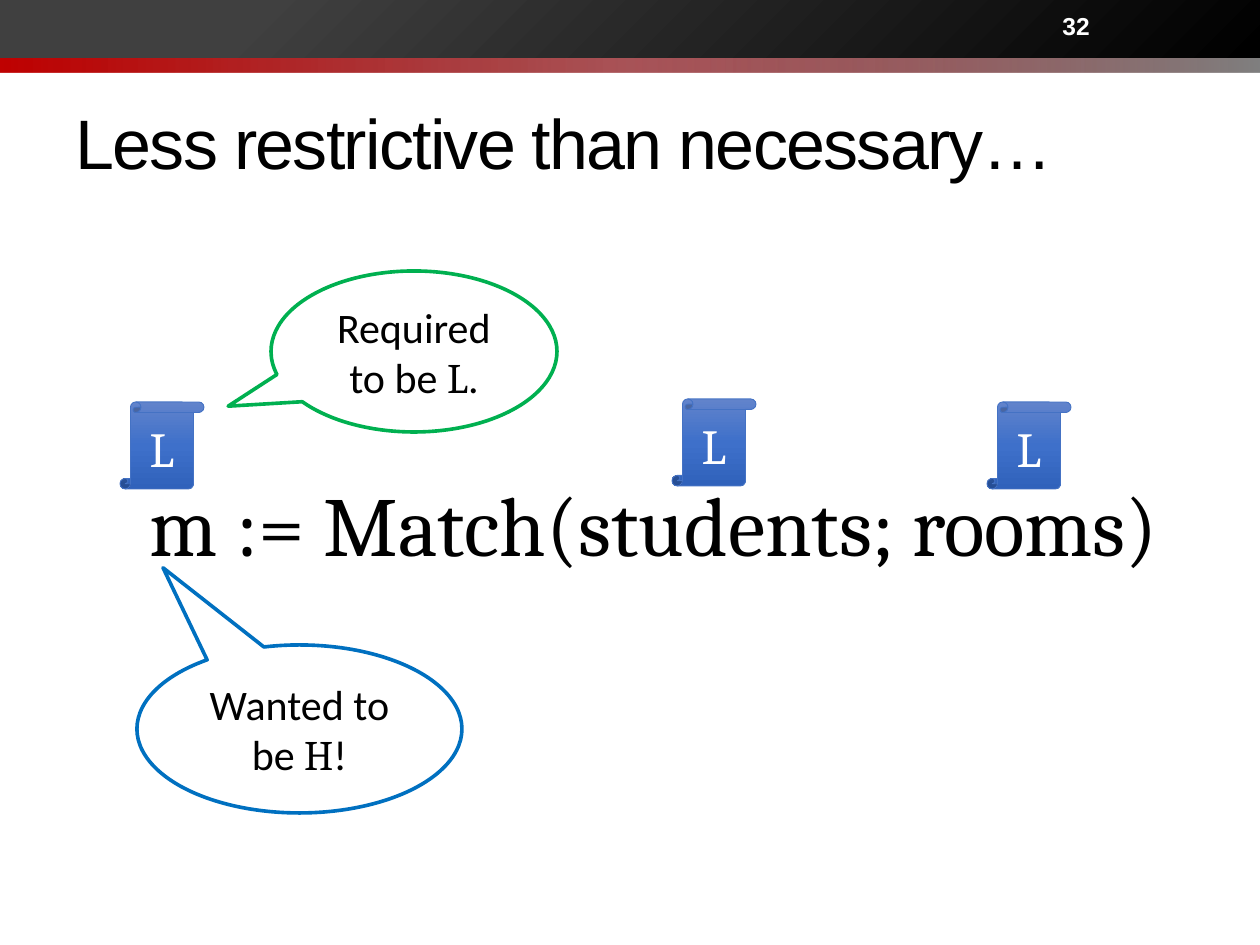
from dataclasses import dataclass

from lxml.etree import SubElement
from pptx import Presentation
from pptx.dml.color import RGBColor
from pptx.enum.shapes import MSO_SHAPE as Shape
from pptx.enum.text import MSO_ANCHOR as Anchor, PP_ALIGN as Align
from pptx.oxml.ns import qn
from pptx.util import Emu, Pt

EMU_PER_PX = 914400 / 126
COLORS = {
    "black": "000000", "white": "FFFFFF", "charcoal": "404040",
    "red": "C00000", "maroon": "7F0007", "grey": "808080",
    "green": "00B050", "blue": "0070C0", "scroll_line": "4472C4",
    "scroll_top": "6183CB", "scroll_middle": "3E70CA", "scroll_bottom": "3062BB",
}


@dataclass(frozen=True)
class Box:
    left: int
    top: int
    width: int
    height: int

    def emu(self) -> list[Emu]:
        return [px(n) for n in (self.left, self.top, self.width, self.height)]


@dataclass(frozen=True)
class Stop:
    position: int
    color: str
    opacity: int = 100


@dataclass(frozen=True)
class Callout:
    box: Box
    tail: tuple[float, float]
    color: str
    words: str
    label: str
    ending: str


def px(length: int) -> Emu:
    return Emu(round(length * EMU_PER_PX))


def rgb(name: str) -> RGBColor:
    return RGBColor.from_string(COLORS[name])


def write(paragraph, text: str, *, size: int, font: str, color: str = "black",
          align=Align.LEFT, bold: bool = False, spacing: int = 0) -> None:
    """Append a formatted run; spacing is in points."""
    paragraph.alignment = align
    run = paragraph.add_run()
    run.text = text
    run.font.size, run.font.name, run.font.bold = Pt(size), font, bold
    run.font.color.rgb = rgb(color)
    if spacing:
        run.font._element.set("spc", str(spacing * 100))


def gradient(shape, stops: list[Stop], angle: int) -> None:
    shape.fill.gradient()
    grad_fill = shape.element.spPr.find(qn("a:gradFill"))
    stop_list = grad_fill.find(qn("a:gsLst"))
    for old_stop in list(stop_list):
        stop_list.remove(old_stop)
    for stop in stops:
        node = SubElement(stop_list, qn("a:gs"), pos=str(stop.position * 1000))
        color = SubElement(node, qn("a:srgbClr"), val=COLORS[stop.color])
        if stop.opacity < 100:
            SubElement(color, qn("a:alpha"), val=str(stop.opacity * 1000))
    grad_fill.find(qn("a:lin")).set("ang", str(angle * 60000))


def add_shape(slide, kind, box: Box, line: str = "", line_width: float = 0):
    shape = slide.shapes.add_shape(kind, *box.emu())
    shape.shadow.inherit = False
    if line:
        shape.line.color.rgb = rgb(line)
        shape.line.width = Pt(line_width)
    else:
        shape.line.fill.background()
    shape.text_frame.word_wrap = True
    shape.text_frame.vertical_anchor = Anchor.MIDDLE
    return shape


def add_text(slide, box: Box, text: str, anchor=Anchor.TOP, **style) -> None:
    frame = slide.shapes.add_textbox(*box.emu()).text_frame
    frame.word_wrap = True
    frame.vertical_anchor = anchor
    write(frame.paragraphs[0], text, **style)


def add_callout(slide, callout: Callout) -> None:
    shape = add_shape(slide, Shape.OVAL_CALLOUT, callout.box, callout.color, 2.08)
    shape.fill.solid()
    shape.fill.fore_color.rgb = rgb("white")
    for index, value in enumerate(callout.tail):
        shape.adjustments[index] = value
    paragraph = shape.text_frame.paragraphs[0]
    for text, font in ((callout.words, "Calibri"), (callout.label, "Cambria"),
                       (callout.ending, "Calibri")):
        write(paragraph, text, size=24, font=font, align=Align.CENTER)


def add_scroll(slide, left: int, top: int) -> None:
    shape = add_shape(slide, Shape.VERTICAL_SCROLL, Box(left, top, 84, 87),
                      "scroll_line", 0.5)
    gradient(shape, [Stop(0, "scroll_top"), Stop(50, "scroll_middle"),
                     Stop(100, "scroll_bottom")], 90)
    write(shape.text_frame.paragraphs[0], "L", size=28, font="Cambria",
          color="white", align=Align.CENTER)


def main() -> None:
    presentation = Presentation()
    presentation.slide_width, presentation.slide_height = px(1260), px(945)
    slide = presentation.slides.add_slide(presentation.slide_layouts[5])

    # Header bands and slide number
    red_band = add_shape(slide, Shape.RECTANGLE, Box(0, 30, 1260, 43))
    gradient(red_band, [Stop(0, "red"), Stop(50, "maroon", 67), Stop(100, "grey")], 0)
    dark_band = add_shape(slide, Shape.RECTANGLE, Box(0, 0, 1260, 58))
    gradient(dark_band, [Stop(0, "black"), Stop(80, "charcoal"),
                         Stop(100, "charcoal")], 225)
    add_text(slide, Box(1050, 3, 147, 45), "32", Anchor.MIDDLE,
             size=14, font="Arial", color="white", bold=True)

    # Title
    title = slide.shapes.title
    title.left, title.top, title.width, title.height = Box(63, 73, 1134, 136).emu()
    title.text_frame.vertical_anchor = Anchor.MIDDLE
    write(title.text_frame.paragraphs[0], "Less restrictive than necessary…",
          size=40, font="Arial", spacing=-1)

    # Statement with its callouts and policy scrolls
    add_text(slide, Box(34, 466, 1240, 115), "m := Match(students; rooms)",
             size=48, font="Cambria", align=Align.CENTER)
    for callout in (
        Callout(Box(137, 645, 325, 168), (-0.42, -0.96), "blue",
                "Wanted to be ", "H", "!"),
        Callout(Box(271, 271, 286, 161), (-0.65, 0.34), "green",
                "Required to be ", "L", "."),
    ):
        add_callout(slide, callout)
    for left, top in ((672, 399), (987, 402), (120, 402)):
        add_scroll(slide, left, top)

    presentation.save("out.pptx")


if __name__ == "__main__":
    main()
